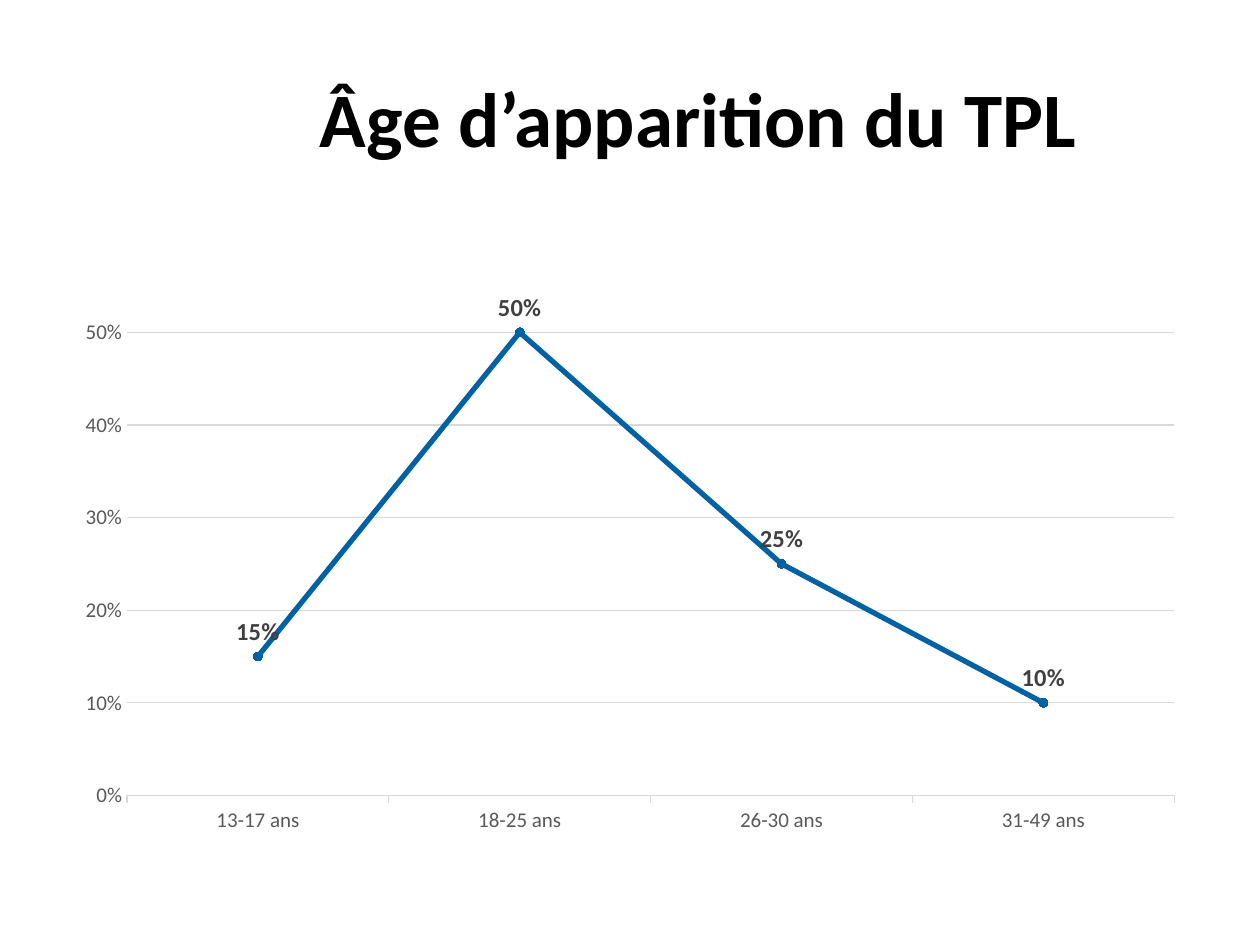
"""Builds a slide with a line chart of age at onset."""
from dataclasses import dataclass

from pptx import Presentation
from pptx.chart.data import CategoryChartData
from pptx.dml.color import RGBColor
from pptx.enum.chart import XL_CHART_TYPE, XL_LABEL_POSITION, XL_MARKER_STYLE, XL_TICK_MARK
from pptx.enum.text import MSO_ANCHOR, PP_ALIGN
from pptx.util import Pt

LINE = XL_CHART_TYPE.LINE_MARKERS
ABOVE = XL_LABEL_POSITION.ABOVE
CIRCLE = XL_MARKER_STYLE.CIRCLE
OUT, NONE = XL_TICK_MARK.OUTSIDE, XL_TICK_MARK.NONE
MIDDLE, CENTER = MSO_ANCHOR.MIDDLE, PP_ALIGN.CENTER


@dataclass
class Theme:
    face: str = "Calibri"
    black: str = "000000"
    grey: str = "595959"
    dark: str = "404040"
    pale: str = "D9D9D9"
    blue: str = "0061A5"
    title: float = 44
    label: float = 14
    axis: float = 12
    base: float = 10


class Deck:
    def __init__(self, theme):
        self.theme = theme
        self.prs = Presentation()
        self.prs.slide_width, self.prs.slide_height = Pt(720), Pt(540)
        self.slide = self.prs.slides.add_slide(self.prs.slide_layouts[5])

    def style(self, font, size, color, bold=False):
        font.name, font.size, font.bold = self.theme.face, Pt(size), bold
        font.color.rgb = RGBColor.from_string(color)

    def stroke(self, line, color, width):
        line.color.rgb = RGBColor.from_string(color)
        line.width = Pt(width)

    def title(self, text, box):
        shape = self.slide.shapes.title
        shape.left, shape.top, shape.width, shape.height = map(Pt, box)
        frame = shape.text_frame
        frame.vertical_anchor = MIDDLE
        para = frame.paragraphs[0]
        para.alignment = CENTER
        run = para.add_run()
        run.text = text
        self.style(run.font, self.theme.title, self.theme.black, True)

    def chart(self, name, points, box):
        data = CategoryChartData(number_format="0%")
        data.categories = list(points)
        data.add_series(name, list(points.values()))
        chart = self.slide.shapes.add_chart(LINE, *map(Pt, box), data).chart
        chart.has_legend = chart.has_title = False
        self.style(chart.font, self.theme.base, self.theme.black)
        self.axes(chart)
        self.curve(chart.plots[0].series[0])

    def axes(self, chart):
        theme, cat, val = self.theme, chart.category_axis, chart.value_axis
        for axis, tick in ((cat, OUT), (val, NONE)):
            axis.major_tick_mark, axis.minor_tick_mark = tick, NONE
            self.style(axis.tick_labels.font, theme.axis, theme.grey)
        self.stroke(cat.format.line, theme.pale, 0.75)
        val.format.line.fill.background()
        val.minimum_scale, val.maximum_scale, val.major_unit = 0, 0.55, 0.1
        val.has_major_gridlines = True
        self.stroke(val.major_gridlines.format.line, theme.pale, 0.75)
        val.tick_labels.number_format = "0%"
        val.tick_labels.number_format_is_linked = False

    def curve(self, series):
        theme, mark, labels = self.theme, series.marker, series.data_labels
        series.smooth = False
        self.stroke(series.format.line, theme.blue, 3)
        mark.style, mark.size = CIRCLE, 5
        mark.format.fill.solid()
        mark.format.fill.fore_color.rgb = RGBColor.from_string(theme.blue)
        self.stroke(mark.format.line, theme.blue, 0.75)
        labels.show_value, labels.position = True, ABOVE
        labels.number_format, labels.number_format_is_linked = "0%", False
        self.style(labels.font, theme.label, theme.dark, True)


def main():
    deck = Deck(Theme())
    deck.title("Âge d’apparition du TPL", (155.5, 21.6, 487.4, 90))
    ages = {"13-17 ans": 0.15, "18-25 ans": 0.5, "26-30 ans": 0.25, "31-49 ans": 0.1}
    deck.chart("Series 1", ages, (36, 157, 648, 325.4))
    deck.prs.save("out.pptx")


if __name__ == "__main__":
    main()
